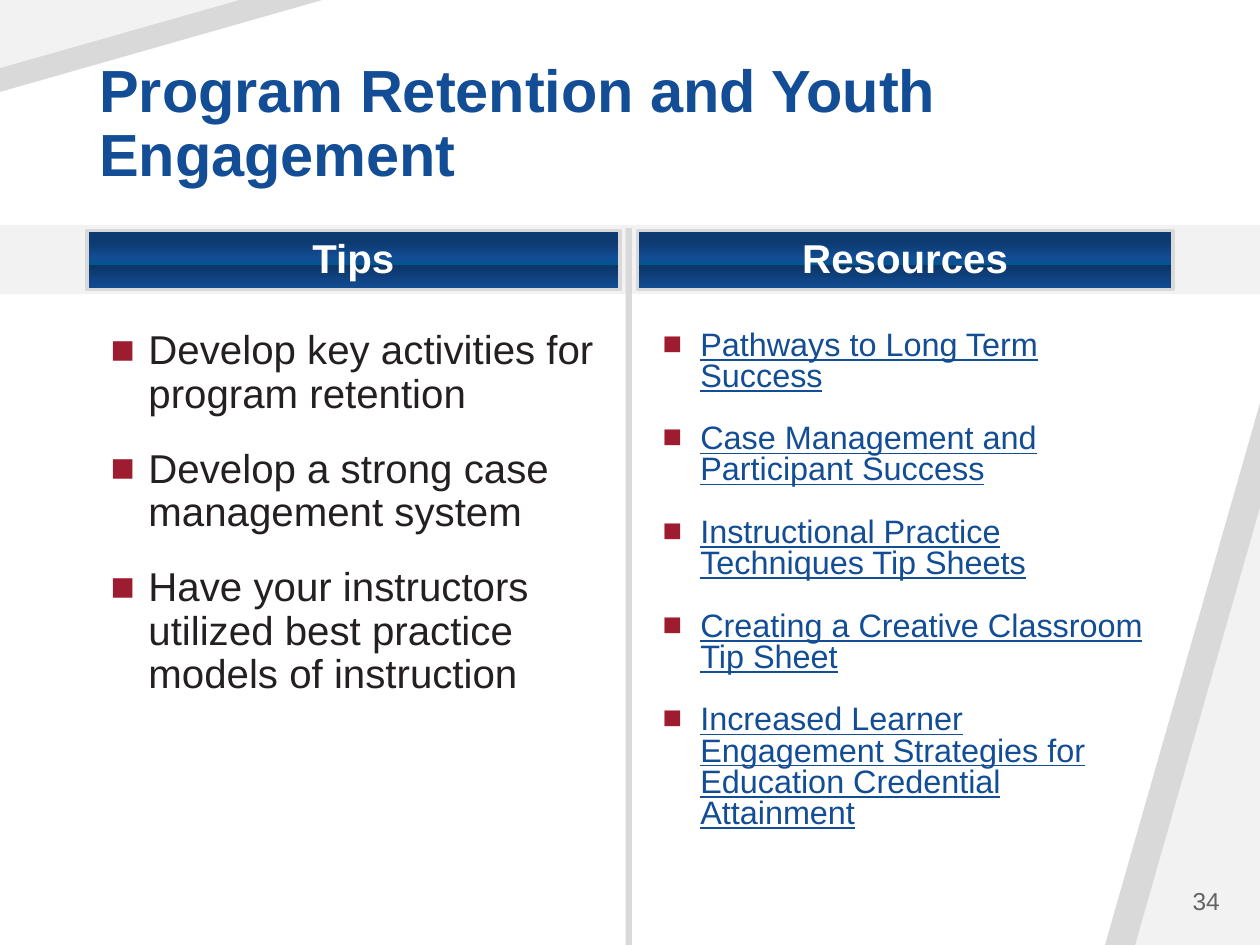
from lxml import etree
from pptx import Presentation
from pptx.dml.color import RGBColor
from pptx.enum.shapes import MSO_SHAPE
from pptx.enum.text import MSO_ANCHOR, PP_ALIGN
from pptx.oxml.ns import qn
from pptx.util import Inches, Pt

TRIANGLE, RECTANGLE = MSO_SHAPE.ISOSCELES_TRIANGLE, MSO_SHAPE.RECTANGLE
TOP, MIDDLE, BOTTOM = MSO_ANCHOR.TOP, MSO_ANCHOR.MIDDLE, MSO_ANCHOR.BOTTOM
LEFT, CENTER, RIGHT = PP_ALIGN.LEFT, PP_ALIGN.CENTER, PP_ALIGN.RIGHT

BLUE, RED, INK, WHITE = "124D95", "9E1C30", "242021", "FFFFFF"
GRAY, PALE, NUMBER_GRAY = "D9D9D9", "F2F2F2", "646464"
BANNER_STOPS = [(19, "0D3A70"), (47, BLUE), (58, "00588F"), (59, "0D3668"), (100, BLUE)]

TIPS = [
    "Develop key activities for program retention",
    "Develop a strong case management system",
    "Have your instructors utilized best practice models of instruction",
]
RESOURCES = [
    "Pathways to Long Term Success",
    "Case Management and Participant Success",
    "Instructional Practice Techniques Tip Sheets",
    "Creating a Creative Classroom Tip Sheet",
    "Increased Learner Engagement Strategies for Education Credential Attainment",
]


def color(value):
    return RGBColor.from_string(value)


def set_values(target, values):
    for name, value in values.items():
        setattr(target, name, value)


class SlideBuilder:
    """Draws styled elements on a grid of 100 columns by 75 rows."""

    def __init__(self, presentation):
        self.font = "Arial"
        self.column = presentation.slide_width / 100
        self.row = presentation.slide_height / 75
        self.slide = presentation.slides.add_slide(presentation.slide_layouts[6])

    def place(self, left, top, width, height):
        return (round(left * self.column), round(top * self.row),
                round(width * self.column), round(height * self.row))

    def shape(self, kind, box, fill):
        shape = self.slide.shapes.add_shape(kind, *self.place(*box))
        shape.shadow.inherit = False
        shape.fill.solid()
        shape.fill.fore_color.rgb = color(fill)
        shape.line.fill.background()
        return shape

    def triangle(self, box, fill, apex, rotation=0):
        shape = self.shape(TRIANGLE, box, fill)
        shape.adjustments[0] = apex
        shape.rotation = rotation

    def fill_text(self, shape, texts, size, fill, anchor=TOP, align=LEFT, spacing=0.9,
                  bullet=False, margins=(0.1, 0.05), **font):
        frame = shape.text_frame
        horizontal, vertical = map(Inches, margins)
        set_values(frame, {"word_wrap": True, "vertical_anchor": anchor,
                           "margin_left": horizontal, "margin_right": horizontal,
                           "margin_top": vertical, "margin_bottom": vertical})
        for index, text in enumerate(texts):
            paragraph = frame.add_paragraph() if index else frame.paragraphs[0]
            if bullet:
                self.bullet(paragraph)
            set_values(paragraph, {"alignment": align, "line_spacing": spacing,
                                   "space_before": Pt(18 if index else 0)})
            run = paragraph.add_run()
            run.text = text
            set_values(run.font, {"name": self.font, "size": Pt(size), **font})
            run.font.color.rgb = color(fill)

    def bullet(self, paragraph):
        properties = paragraph._p.get_or_add_pPr()
        properties.set("marL", str(Inches(0.3)))
        properties.set("indent", str(Inches(-0.3)))
        bullet_color = etree.SubElement(properties, qn("a:buClr"))
        etree.SubElement(bullet_color, qn("a:srgbClr"), val=RED)
        etree.SubElement(properties, qn("a:buFont"), typeface=self.font)
        etree.SubElement(properties, qn("a:buChar"), char="■")

    def text(self, box, texts, size, fill, **style):
        shape = self.slide.shapes.add_textbox(*self.place(*box))
        self.fill_text(shape, texts, size, fill, **style)

    def banner(self, box, title):
        shape = self.shape(RECTANGLE, box, BLUE)
        shape.fill.gradient()
        shape.fill.gradient_angle = 270
        stops = shape._element.spPr.find(qn("a:gradFill")).find(qn("a:gsLst"))
        for stop in list(stops):
            stops.remove(stop)
        for position, value in BANNER_STOPS:
            stop = etree.SubElement(stops, qn("a:gs"), pos=str(position * 1000))
            etree.SubElement(stop, qn("a:srgbClr"), val=value)
        shape.line.color.rgb = color(GRAY)
        shape.line.width = Pt(2)
        self.fill_text(shape, [title], 23, WHITE, anchor=MIDDLE, align=CENTER,
                       margins=(0.05, 0.06), bold=True)


def main():
    presentation = Presentation()
    presentation.slide_width, presentation.slide_height = Inches(10), Inches(7.5)
    builder = SlideBuilder(presentation)

    builder.triangle((87.7, 32, 12.3, 43), GRAY, apex=1)
    builder.triangle((90.1, 40.3, 9.9, 34.7), PALE, apex=1)
    builder.triangle((9.15, -9.15, 7.3, 25.6), GRAY, apex=0, rotation=90)
    builder.triangle((6.8, -6.8, 5.4, 19), PALE, apex=0, rotation=90)
    builder.shape(RECTANGLE, (0, 17.85, 100, 5.5), PALE)
    builder.shape(RECTANGLE, (49.65, 18.1, 0.5, 56.9), GRAY)

    builder.text((6.9, 4, 86.2, 11.5), ["Program Retention and Youth Engagement"],
                 34, BLUE, anchor=BOTTOM, bold=True)
    builder.banner((6.9, 18.3, 42.3, 4.7), "Tips")
    builder.text((7.8, 25.7, 41, 42), TIPS, 23, INK, bullet=True)
    builder.banner((50.6, 18.3, 42.5, 4.7), "Resources")
    builder.text((51.6, 25.8, 40.9, 41.9), RESOURCES, 18.5, BLUE,
                 bullet=True, spacing=0.8, underline=True)
    builder.text((89.6, 69.5, 8.2, 4), ["34"], 14, NUMBER_GRAY,
                 anchor=MIDDLE, align=RIGHT, spacing=1.0)

    presentation.save("out.pptx")


if __name__ == "__main__":
    main()
